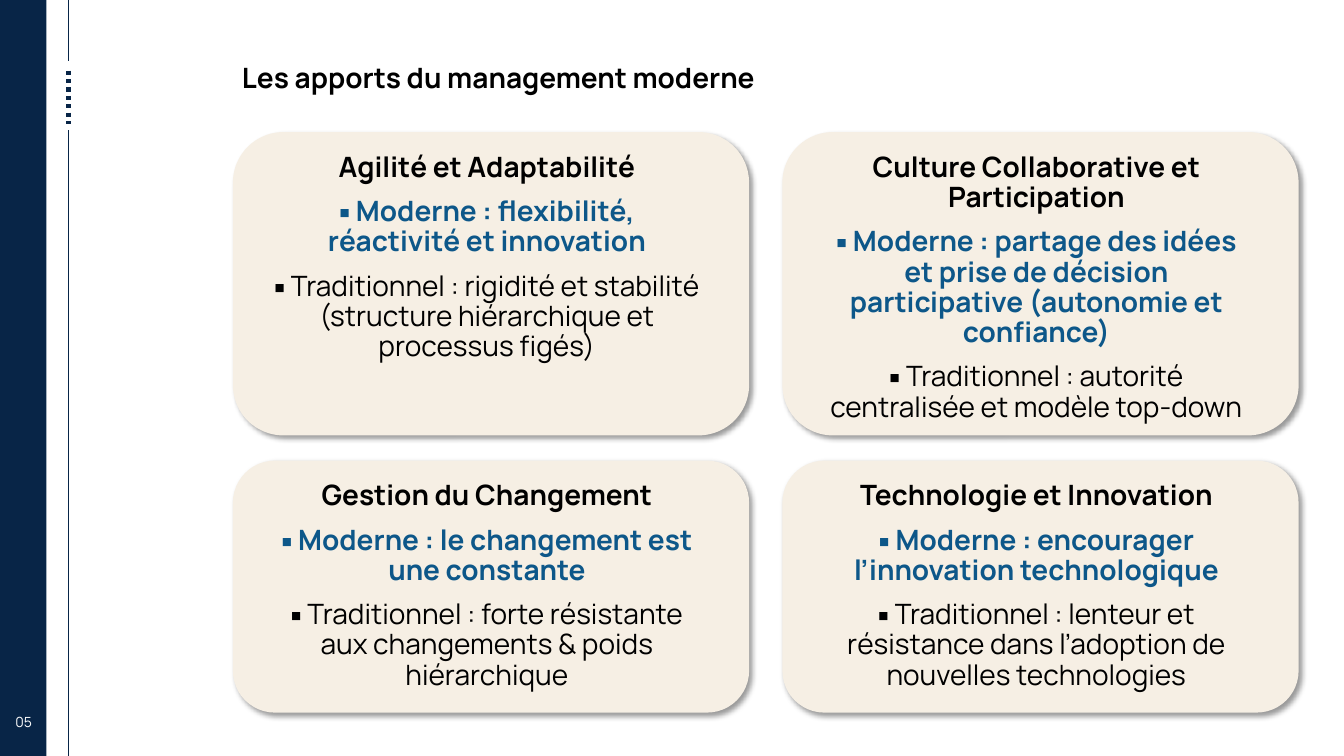
"""Build the slide on what modern management brings, as a two-by-two grid of cards."""
import pptx
import pptx.dml.color
import pptx.enum.dml
import pptx.enum.shapes
import pptx.enum.text
import pptx.oxml
import pptx.oxml.ns
import pptx.util
from pptx.util import Inches, Pt

NAVY = pptx.dml.color.RGBColor(0x08, 0x25, 0x47)
BLUE = pptx.dml.color.RGBColor(0x0D, 0x57, 0x89)
CREAM = pptx.dml.color.RGBColor(0xF6, 0xEF, 0xE4)
BLACK = pptx.dml.color.RGBColor(0x00, 0x00, 0x00)
WHITE = pptx.dml.color.RGBColor(0xFF, 0xFF, 0xFF)

FONT = "Manrope"
CENTER = pptx.enum.text.PP_ALIGN.CENTER
SHADOW = (
    f'<a:effectLst {pptx.oxml.ns.nsdecls("a")}>'
    '<a:outerShdw blurRad="50800" dist="38100" dir="2700000" algn="tl" rotWithShape="0">'
    '<a:srgbClr val="000000"><a:alpha val="40000"/></a:srgbClr>'
    '</a:outerShdw></a:effectLst>'
)


def add_run(paragraph, text, size, color, bold=False):
    run = paragraph.add_run()
    run.text = text
    run.font.name = FONT
    run.font.size = Pt(size)
    run.font.bold = bold
    run.font.color.rgb = color


def add_panel(kind, left, top, width, height, color):
    panel = slide.shapes.add_shape(
        kind, Inches(left), Inches(top), Inches(width), Inches(height))
    panel.shadow.inherit = False
    panel.fill.solid()
    panel.fill.fore_color.rgb = color
    panel.line.fill.background()
    return panel


deck = pptx.Presentation()
deck.slide_width = Inches(13.33)
deck.slide_height = Inches(7.5)
slide = deck.slides.add_slide(deck.slide_layouts[5])

RULE_X = 0.68
SOLID = pptx.enum.dml.MSO_LINE.SOLID
DOTTED = pptx.enum.dml.MSO_LINE.ROUND_DOT
for start, end, weight, dash in [
    (0, 0.61, 0.5, SOLID),
    (0.7, 1.23, 3, DOTTED),
    (1.29, 7.5, 0.5, SOLID),
]:
    rule = slide.shapes.add_connector(
        pptx.enum.shapes.MSO_CONNECTOR.STRAIGHT,
        Inches(RULE_X), Inches(start), Inches(RULE_X), Inches(end))
    rule.line.color.rgb = NAVY
    rule.line.width = Pt(weight)
    rule.line.dash_style = dash
    rule._element.spPr.append(
        pptx.oxml.parse_xml(f'<a:effectLst {pptx.oxml.ns.nsdecls("a")}/>'))

add_panel(pptx.enum.shapes.MSO_SHAPE.RECTANGLE, 0, 0, 0.46, 7.5, NAVY)

page_number = slide.shapes.add_textbox(
    Inches(0.07), Inches(7.08), Inches(0.33), Inches(0.17)).text_frame
page_number.word_wrap = True
page_number.margin_left = page_number.margin_right = 0
page_number.margin_top = page_number.margin_bottom = 0
page_number.paragraphs[0].alignment = CENTER
add_run(page_number.paragraphs[0], "05", 10, WHITE)

title = slide.shapes.title
title.left, title.top = Inches(2.3), Inches(0.55)
title.width, title.height = Inches(9.29), Inches(0.44)
title.text_frame.word_wrap = True
title.text_frame.auto_size = pptx.enum.text.MSO_AUTO_SIZE.NONE
title.text_frame.vertical_anchor = pptx.enum.text.MSO_ANCHOR.TOP
title.text_frame.paragraphs[0].alignment = pptx.enum.text.PP_ALIGN.LEFT
add_run(title.text_frame.paragraphs[0], "Les apports du management moderne", 20, BLACK, True)

COLUMNS = [2.31, 7.76]
ROWS = [(1.31, 3.01), (4.57, 2.5)]
CARD_WIDTH = 5.12
INSET_X, INSET_Y = 0.29, 0.16
TEXT_WIDTH = 4.46

contributions = [
    ("Agilité et Adaptabilité",
     "flexibilité, réactivité et innovation",
     "rigidité et stabilité (structure hiérarchique et processus figés)"),
    ("Culture Collaborative et Participation",
     "partage des idées et prise de décision participative (autonomie et confiance)",
     "autorité centralisée et modèle top-down"),
    ("Gestion du Changement",
     "le changement est une constante",
     "forte résistante aux changements & poids hiérarchique"),
    ("Technologie et Innovation",
     "encourager l’innovation technologique",
     "lenteur et résistance dans l’adoption de nouvelles technologies"),
]

for index, (heading, modern, traditional) in enumerate(contributions):
    left = COLUMNS[index % 2]
    top, height = ROWS[index // 2]
    card = add_panel(pptx.enum.shapes.MSO_SHAPE.ROUNDED_RECTANGLE,
                     left, top, CARD_WIDTH, height, CREAM)
    properties = card._element.spPr
    properties.replace(properties.find(pptx.oxml.ns.qn("a:effectLst")),
                       pptx.oxml.parse_xml(SHADOW))

    comparison = slide.shapes.add_textbox(
        Inches(left + INSET_X), Inches(top + INSET_Y),
        Inches(TEXT_WIDTH), Inches(height - 2 * INSET_Y)).text_frame
    comparison.word_wrap = True
    for position, (text, color, bold) in enumerate([
        (heading, BLACK, True),
        (f"▪ Moderne : {modern}", BLUE, True),
        (f"▪ Traditionnel : {traditional}", BLACK, False),
    ]):
        paragraph = comparison.add_paragraph() if position else comparison.paragraphs[0]
        paragraph.alignment = CENTER
        paragraph.line_spacing = 0.9
        paragraph.space_before = Pt(10)
        add_run(paragraph, text, 20, color, bold)

deck.save("out.pptx")
